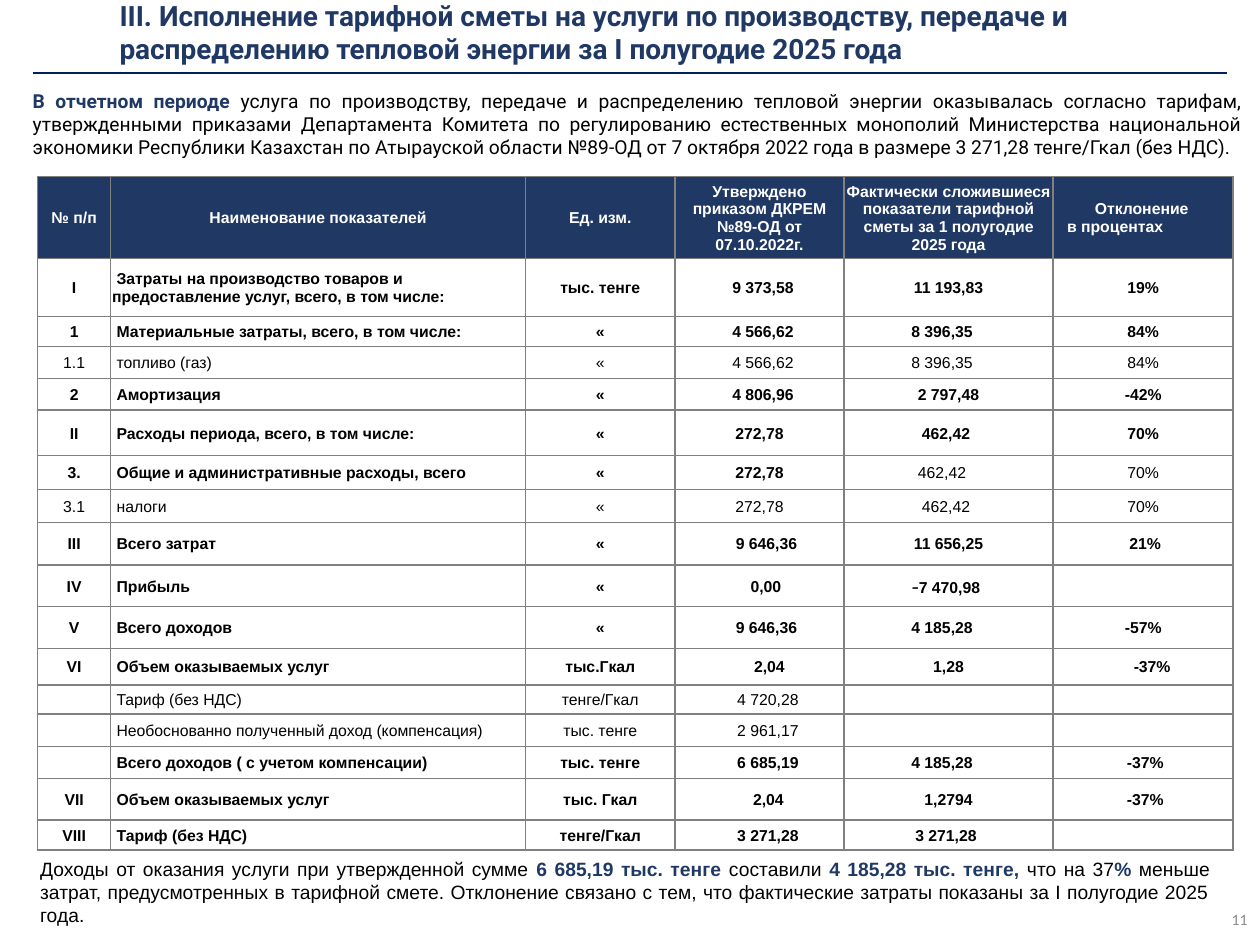
from lxml import etree
from pptx import Presentation
from pptx.dml.color import RGBColor
from pptx.enum import shapes, text
from pptx.oxml import ns
from pptx.util import Cm, Pt

NAVY = RGBColor(0x20, 0x38, 0x64)
RULE = RGBColor(0x00, 0x20, 0x60)
GREY = RGBColor(0x80, 0x80, 0x80)
PALE = RGBColor(0x8C, 0x8C, 0x8C)
BLACK = RGBColor(0, 0, 0)
WHITE = RGBColor(0xFF, 0xFF, 0xFF)
ALIGN = text.PP_ALIGN
MIDDLE = text.MSO_ANCHOR.MIDDLE

COLUMNS = [1.47, 8.36, 3.02, 3.4, 4.22, 3.63]
HEIGHTS = [1.65, 1.17, 0.61, 0.64, 0.64, 0.91, 0.69, 0.66, 0.86,
           0.84, 0.84, 0.74, 0.58, 0.66, 0.64, 0.84, 0.61]
ROWS = [
    ["№ п/п", "Наименование показателей", "Ед. изм.",
     "Утверждено приказом ДКРЕМ №89-ОД от 07.10.2022г.",
     "Фактически сложившиеся показатели тарифной сметы за 1 полугодие 2025 года",
     "Отклонение\vв процентах"],
    ["I", "Затраты на производство товаров и предоставление услуг, всего, в том числе:",
     "тыс. тенге", "9 373,58", "11 193,83", "19%"],
    ["1", "Материальные затраты, всего, в том числе:", "«", "4 566,62", "8 396,35", "84%"],
    ["1.1", "топливо (газ)", "«", "4 566,62", "8 396,35", "84%"],
    ["2", "Амортизация", "«", "4 806,96", "2 797,48", "-42%"],
    ["II", "Расходы периода, всего, в том числе:", "«", "272,78", "462,42", "70%"],
    ["3.", "Общие и административные расходы, всего", "«", "272,78", "462,42", "70%"],
    ["3.1", "налоги", "«", "272,78", "462,42", "70%"],
    ["III", "Всего затрат", "«", "9 646,36", "11 656,25", "21%"],
    ["IV", "Прибыль", "«", "0,00", "-7 470,98", ""],
    ["V", "Всего доходов", "«", "9 646,36", "4 185,28", "-57%"],
    ["VI", "Объем оказываемых услуг", "тыс.Гкал", "2,04", "1,28", "-37%"],
    ["", "Тариф (без НДС)", "тенге/Гкал", "4 720,28", "", ""],
    ["", "Необоснованно полученный доход (компенсация)", "тыс. тенге", "2 961,17", "", ""],
    ["", "Всего доходов ( с учетом компенсации)", "тыс. тенге", "6 685,19", "4 185,28", "-37%"],
    ["VII", "Объем оказываемых услуг", "тыс. Гкал", "2,04", "1,2794", "-37%"],
    ["VIII", "Тариф (без НДС)", "тенге/Гкал", "3 271,28", "3 271,28", ""],
]
LIGHT_ROWS = {3, 7, 12, 13}
LIGHT_CELLS = {(6, 4), (6, 5)}
APPROVED_SHIFTS = [0, 0.07, 0.07, 0.07, 0.07, 0, 0, 0, 0.14,
                   0.13, 0.14, 0.2, 0.17, 0.17, 0.17, 0.18, 0.17]
SHIFTS = {(row, 3): shift for row, shift in enumerate(APPROVED_SHIFTS)}
SHIFTS.update({(row, 4): -0.13 for row in (2, 3, 6, 10, 14)})
SHIFTS.update({(row, 4): -0.05 for row in (5, 7, 9, 16)})
SHIFTS.update({(8, 5): 0.04, (11, 5): 0.18, (14, 5): 0.04, (15, 5): 0.04})


class TariffSlide:
    def __init__(self, page):
        self.page = page
        self.table_font = {"name": "Arial", "size": Pt(9)}

    def style(self, font, color, **values):
        for name, value in values.items():
            setattr(font, name, value)
        font.color.rgb = color

    def add_spans(self, para, spans, **values):
        for words, color, bold in spans:
            span = para.add_run()
            span.text = words
            self.style(span.font, color, bold=bold, **values)

    def text_box(self, place, spans, align, anchor=text.MSO_ANCHOR.TOP, **values):
        box = self.page.shapes.add_textbox(*map(Cm, place))
        frame = box.text_frame
        frame.word_wrap = True
        frame.vertical_anchor = anchor
        para = frame.paragraphs[0]
        para.alignment = align
        self.add_spans(para, spans, **values)

    def rule(self, left, right, top):
        line = self.page.shapes.add_connector(
            shapes.MSO_CONNECTOR.STRAIGHT, Cm(left), Cm(top), Cm(right), Cm(top))
        line.line.color.rgb = RULE
        line.line.width = Pt(1)
        etree.SubElement(line._element.spPr, ns.qn("a:effectLst"))

    def borders(self, cell):
        properties = cell._tc.get_or_add_tcPr()
        for position, side in enumerate(("lnL", "lnR", "lnT", "lnB")):
            edge = etree.Element(ns.qn("a:" + side), w=str(Pt(1)))
            fill = etree.SubElement(edge, ns.qn("a:solidFill"))
            etree.SubElement(fill, ns.qn("a:srgbClr"), val=str(GREY))
            properties.insert(position, edge)

    def cell(self, cell, words, row, column):
        header = row == 0
        shift = SHIFTS.get((row, column), 0)
        margins = {"margin_left": 0.03 + max(0, 2 * shift),
                   "margin_right": 0.03 + max(0, -2 * shift),
                   "margin_top": 0.03, "margin_bottom": 0}
        align, indent = ALIGN.CENTER, 0
        if column == 1 and not header:
            align, indent = ALIGN.LEFT, 0.09
        elif header and column == 5:
            align, indent = ALIGN.LEFT, 0.56
            margins["margin_left"] = 0.28
        for name, value in margins.items():
            setattr(cell, name, Cm(value))
        cell.vertical_anchor = MIDDLE
        if header:
            cell.fill.solid()
            cell.fill.fore_color.rgb = NAVY
        else:
            cell.fill.background()
        self.borders(cell)
        para = cell.text_frame.paragraphs[0]
        para.alignment = align
        if indent:
            para._p.get_or_add_pPr().set("indent", str(Cm(indent)))
        color = WHITE if header else BLACK
        bold = row not in LIGHT_ROWS and (row, column) not in LIGHT_CELLS
        if not words:
            etree.SubElement(para._p, ns.qn("a:endParaRPr"), sz="900")
        if words.startswith("-7"):
            self.add_spans(para, [("-", color, False)], name="Times New Roman", size=Pt(12))
            words = words[1:]
        for position, line in enumerate(words.split("\v") if words else []):
            if position:
                para.add_line_break()
            self.add_spans(para, [(line, color, bold)], **self.table_font)

    def table(self, left, top):
        table = self.page.shapes.add_table(
            len(ROWS), len(COLUMNS), Cm(left), Cm(top),
            Cm(sum(COLUMNS)), Cm(sum(HEIGHTS))).table
        table.first_row = table.horz_banding = False
        for column, width in zip(table.columns, COLUMNS):
            column.width = Cm(width)
        for row, height in zip(table.rows, HEIGHTS):
            row.height = Cm(height)
        for row, values in enumerate(ROWS):
            for column, words in enumerate(values):
                self.cell(table.cell(row, column), words, row, column)


def main():
    deck = Presentation()
    deck.slide_width, deck.slide_height = Cm(25.4), Cm(19.05)
    slide = TariffSlide(deck.slides.add_slide(deck.slide_layouts[6]))
    slide.text_box((0.56, 17.15, 24.08, 2.69), [
        ("Доходы от оказания услуги при утвержденной сумме ", BLACK, False),
        ("6 685,19 тыс. тенге ", NAVY, True),
        ("составили ", BLACK, False),
        ("4 185,28 тыс. тенге, ", NAVY, True),
        ("что на 37", BLACK, False),
        ("% ", NAVY, True),
        ("меньше затрат, предусмотренных в тарифной смете. Отклонение связано с тем, "
         "что фактические затраты показаны за I полугодие 2025 года.", BLACK, False),
    ], ALIGN.JUSTIFY, name="Arial", size=Pt(11))
    slide.table(0.76, 3.56)
    slide.text_box((19.69, 18.03, 5.71, 1.02), [("11", PALE, False)],
                   ALIGN.RIGHT, MIDDLE, name="Calibri", size=Pt(9))
    slide.text_box((2.16, -0.08, 22.68, 1.45), [
        ("III. Исполнение тарифной сметы на услуги по производству, передаче и "
         "распределению тепловой энергии за I полугодие 2025 года", NAVY, True),
    ], ALIGN.LEFT, MIDDLE, name="Roboto", size=Pt(16))
    slide.rule(0.66, 24.74, 1.47)
    slide.text_box((0.41, 1.68, 24.89, 1.68), [
        ("В отчетном периоде ", NAVY, True),
        ("услуга по производству, передаче и распределению тепловой энергии оказывалась "
         "согласно тарифам, утвержденными приказами Департамента Комитета по регулированию "
         "естественных монополий Министерства национальной экономики Республики Казахстан "
         "по Атырауской области №89-ОД от 7 октября 2022 года в размере "
         "3 271,28 тенге/Гкал (без НДС).", BLACK, False),
    ], ALIGN.JUSTIFY, name="Roboto", size=Pt(11))
    deck.save("out.pptx")


if __name__ == "__main__":
    main()
